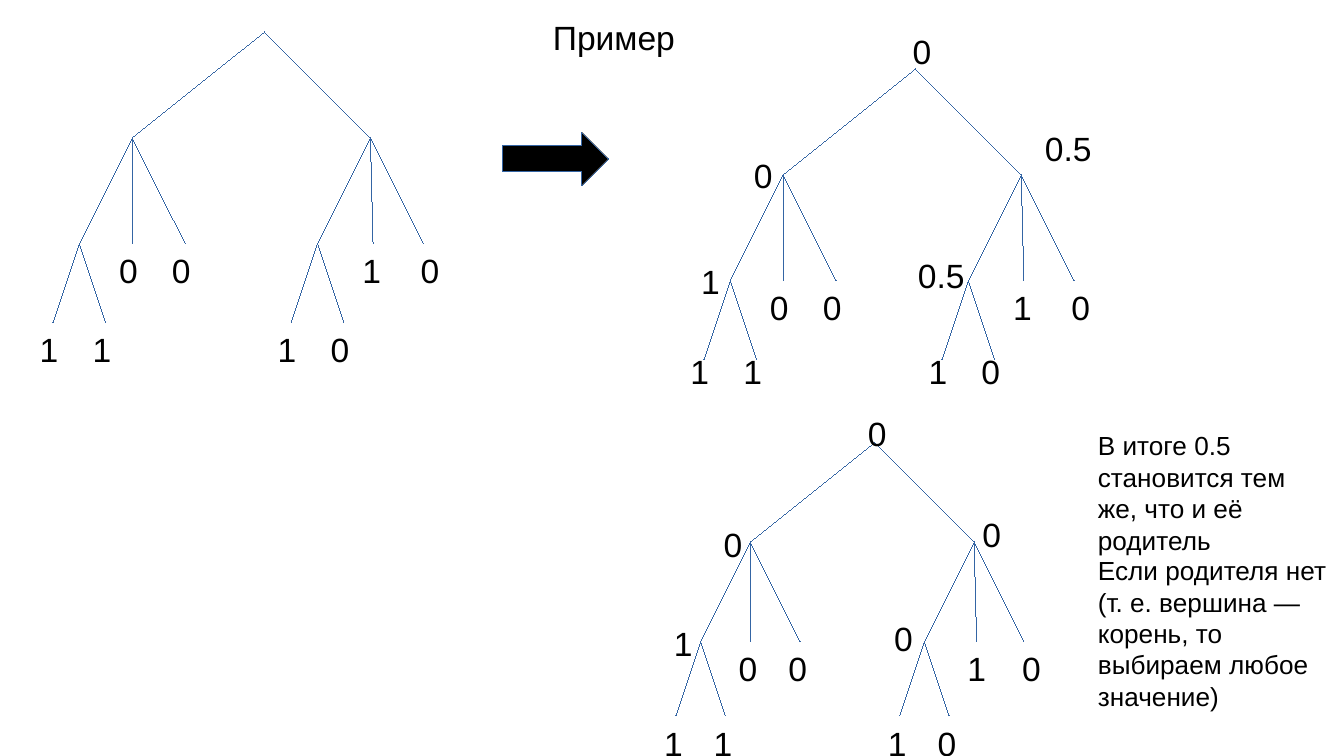
from pptx import Presentation
from pptx.dml.color import RGBColor
from pptx.enum.shapes import MSO_CONNECTOR, MSO_SHAPE
from pptx.oxml.ns import qn
from pptx.util import Cm, Inches, Pt
from lxml import etree

STRAIGHT = MSO_CONNECTOR.STRAIGHT
RIGHT_ARROW = MSO_SHAPE.RIGHT_ARROW

ROOT, LEFT, RIGHT = (0, 0), (-5, 4), (4, 4)
LEFT_INNER, RIGHT_INNER = (-7, 8), (2, 8)
BRANCHES = [
    (ROOT, [LEFT, RIGHT]),
    (RIGHT, [RIGHT_INNER, (4.1, 8), (6, 8)]),
    (LEFT, [LEFT_INNER, (-5, 8), (-3, 8)]),
    (RIGHT_INNER, [(1, 11), (3, 11)]),
    (LEFT_INNER, [(-8, 11), (-6, 11)]),
]
BOTTOM_LEAVES = [("1", -9), ("1", -7), ("1", 0), ("0", 2)]
MIDDLE_LEAVES = [("0", -6, 2), ("0", -4, 2), ("1", 3.2, 2), ("0", 5.4, 3)]


def color(value):
    return RGBColor.from_string(value)


class Board:
    cell = Cm(0.5)
    font = "Arial"
    ink = "000000"
    edge = "3465A4"
    label_height = 1.95

    def __init__(self, slide):
        self.slide = slide

    def grid(self, *cells):
        return [round(n * self.cell) for n in cells]

    def text(self, text, x, y, w, h=label_height, size=18):
        sp = self.slide.shapes.add_textbox(*self.grid(x, y, w, h))
        tf = sp.text_frame
        tf.word_wrap = True
        p = tf.paragraphs[0]
        p.text = text
        p.font.name = self.font
        p.font.size = Pt(size)
        p.font.color.rgb = color(self.ink)

    def outline(self, sp):
        sp.line.color.rgb = color(self.edge)
        sp._element.spPr.find(qn("a:ln")).set("w", "0")

    def line(self, x1, y1, x2, y2):
        sp = self.slide.shapes.add_connector(STRAIGHT, *self.grid(x1, y1, x2, y2))
        self.outline(sp)
        etree.SubElement(sp._element.spPr, qn("a:effectLst"))

    def arrow(self, x, y, w, h):
        sp = self.slide.shapes.add_shape(RIGHT_ARROW, *self.grid(x, y, w, h))
        sp.shadow.inherit = False
        sp.fill.solid()
        sp.fill.fore_color.rgb = color(self.ink)
        self.outline(sp)

    def tree(self, x, y, scale=1, leaf_row=11, values=()):
        for (px, py), children in BRANCHES:
            for cx, cy in children:
                self.line(x + px * scale, y + py * scale, x + cx * scale, y + cy * scale)
        labels = [(text, dx, leaf_row, 2) for text, dx in BOTTOM_LEAVES]
        labels += [(text, dx, 8, w) for text, dx, w in MIDDLE_LEAVES]
        for text, dx, dy, w in labels + list(values):
            self.text(text, x + dx * scale, y + dy * scale, w * scale)


def main():
    prs = Presentation()
    prs.slide_width = Inches(10)
    prs.slide_height = prs.slide_width * 9 // 16
    s = Board(prs.slides.add_slide(prs.slide_layouts[6]))

    s.text("Пример", 20.4, 0.4, 15)
    s.tree(10, 1.2)
    s.tree(34.6, 2.6, leaf_row=10.4, values=[
        ("1", -8.6, 7, 2),
        ("0", -6.6, 3, 2),
        ("0.5", -0.4, 6.8, 3),
        ("0.5", 4.4, 2, 3),
        ("0", -0.6, -1.7, 2),
    ])
    s.tree(33.06, 16.72, scale=0.94, values=[
        ("1", -8.6, 7, 2),
        ("0", -6.6, 3, 2),
        ("0", 0.25, 6.8, 1.8),
        ("0", 3.8, 2.6, 1.9),
        ("0", -0.8, -1.45, 2),
    ])
    s.arrow(19, 5, 4, 2)
    s.text("В итоге 0.5 становится тем же, что и её родитель", 41, 16, 9, 4.9, 14)
    s.text("Если родителя нет (т. е. вершина — корень, то выбираем любое значение)",
           41, 20.72, 10, 8.3, 14)
    prs.save("out.pptx")


if __name__ == "__main__":
    main()
